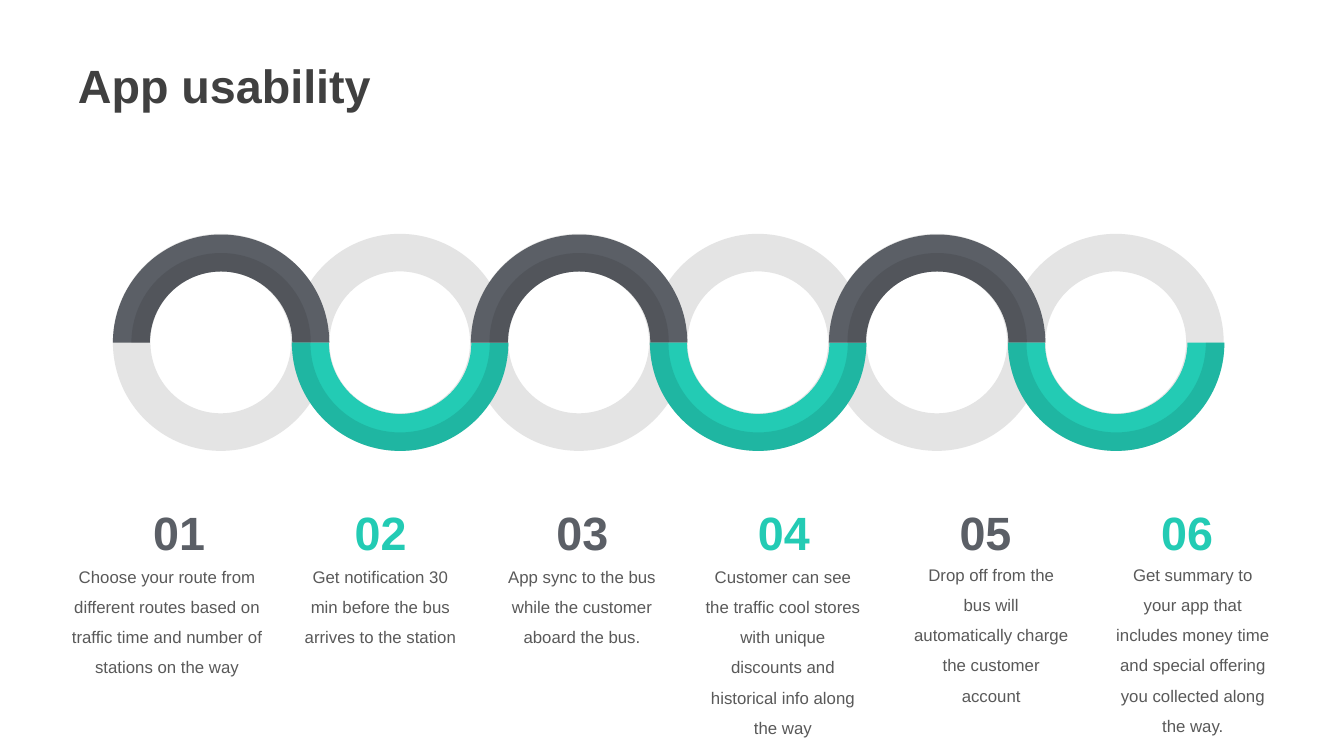
from lxml import etree
from pptx import Presentation
from pptx.dml.color import RGBColor
from pptx.enum.shapes import MSO_SHAPE
from pptx.enum.text import MSO_AUTO_SIZE, PP_ALIGN
from pptx.oxml.ns import qn
from pptx.util import Inches, Pt

DONUT = MSO_SHAPE.DONUT
CENTER, JUSTIFY = PP_ALIGN.CENTER, PP_ALIGN.JUSTIFY
FIT_SHAPE, NO_FIT = MSO_AUTO_SIZE.SHAPE_TO_FIT_TEXT, MSO_AUTO_SIZE.NONE

FONT = "Arial"
SLATE, TEAL = "5B5F66", "23CBB4"
SLATE_SHADE, TEAL_SHADE = "2E3033", "12655A"

# Chain of rings: centre of the first, distance between centres, radii
FIRST_X, CENTER_Y, RING_STEP = 3.29, 5.1, 2.664
OUTER, MIDDLE, INNER = 1.61, 1.335, 1.06
HALF_TURN = 180 * 60000

# Text, then left, top, width and height of its box
STEPS = [
    ("Choose your route from different routes based on traffic time and "
     "number of stations on the way", 0.82, 8.23, 3.33, 1.92),
    ("Get notification 30 min before the bus arrives to the station",
     4.41, 8.23, 2.5, 1.46),
    ("App sync to the bus while the customer aboard the bus.",
     7.41, 8.23, 2.5, 1.41),
    ("Customer can see the traffic cool stores with unique discounts and "
     "historical info along the way", 10.4, 8.23, 2.5, 2.77),
    ("Drop off from the bus will automatically charge the customer account",
     13.5, 8.2, 2.5, 2.32),
    ("Get summary to your app that includes money time and special offering "
     "you collected along the way.", 16.5, 8.2, 2.5, 2.77),
]


def rgb(color):
    return RGBColor.from_string(color)


def paint(sp, color, opacity=100):
    """Give a shape a plain fill, without line or shadow."""
    sp.shadow.inherit = False
    sp.line.fill.background()
    sp.fill.solid()
    sp.fill.fore_color.rgb = rgb(color)
    if opacity < 100:
        clr = sp._element.spPr.find(qn("a:solidFill"))[0]
        etree.SubElement(clr, qn("a:alpha")).set("val", str(opacity * 1000))


def add_ring(s, cx):
    sp = s.shapes.add_shape(DONUT, Inches(cx - OUTER), Inches(3.48),
                            Inches(3.21), Inches(3.23))
    sp.adjustments[0] = 0.174
    paint(sp, "A6A6A6", 30)


def bend(corner, end, radius, start, swing):
    """Replace the two lines corner and end by one arc."""
    arc = etree.Element(qn("a:arcTo"))
    for name, value in (("wR", Inches(radius)), ("hR", Inches(radius)),
                        ("stAng", start), ("swAng", swing)):
        arc.set(name, str(int(value)))
    corner.getparent().replace(corner, arc)
    end.getparent().remove(end)


def add_half_ring(s, cx, outer, inner, side, color, opacity=100):
    """Draw half a ring; side is -1 for the upper half, 1 for the lower."""
    offsets = [(outer, 0), (0, outer), (-outer, 0),
               (-inner, 0), (0, inner), (inner, 0)]
    points = [(Inches(cx + x), Inches(CENTER_Y + side * y)) for x, y in offsets]
    builder = s.shapes.build_freeform(*points[0])
    builder.add_line_segments(points[1:], close=True)
    sp = builder.convert_to_shape()
    lines = list(sp._element.iter(qn("a:lnTo")))
    bend(lines[0], lines[1], outer, 0, side * HALF_TURN)
    bend(lines[3], lines[4], inner, HALF_TURN, -side * HALF_TURN)
    paint(sp, color, opacity)


def add_text(s, text, box, size, color, bold=False, align=CENTER,
             spacing=None, fit=FIT_SHAPE):
    sp = s.shapes.add_textbox(*map(Inches, box))
    tf = sp.text_frame
    tf.word_wrap = True
    tf.auto_size = fit
    p = tf.paragraphs[0]
    p.text = text
    p.alignment = align
    if spacing:
        p.line_spacing = spacing
    font = p.runs[0].font
    font.name, font.size, font.bold = FONT, Pt(size), bold
    font.color.rgb = rgb(color)
    return tf


def add_number(s, i):
    tf = add_text(s, f"{i + 1:02}", (1.91 + 3 * i, 7.45, 1.51, 1.15), 50,
                  TEAL if i % 2 else SLATE, bold=True, fit=NO_FIT)
    tf.margin_left = tf.margin_right = Inches(0.07)
    tf.margin_top = tf.margin_bottom = Inches(0.04)


def main():
    prs = Presentation()
    prs.slide_width, prs.slide_height = Inches(20), Inches(11.25)
    s = prs.slides.add_slide(prs.slide_layouts[6])

    # Pale rings, then the wave that runs over them
    centers = [FIRST_X + RING_STEP * i for i in range(len(STEPS))]
    for cx in centers:
        add_ring(s, cx)
    for i, cx in enumerate(centers):
        if i % 2:
            add_half_ring(s, cx, OUTER, INNER, 1, TEAL)
            add_half_ring(s, cx, OUTER, MIDDLE, 1, TEAL_SHADE, 20)
        else:
            add_half_ring(s, cx, OUTER, INNER, -1, SLATE)
            add_half_ring(s, cx, MIDDLE, INNER, -1, SLATE_SHADE, 20)

    # Title
    add_text(s, "App usability", (1.06, 0.79, 17.34, 0.94), 50, "404040",
             bold=True, align=JUSTIFY)

    # Numbered steps
    for i, (text, *box) in enumerate(STEPS):
        add_number(s, i)
        add_text(s, text, box, 18, "595959", spacing=1.5)

    prs.save("out.pptx")


if __name__ == "__main__":
    main()
